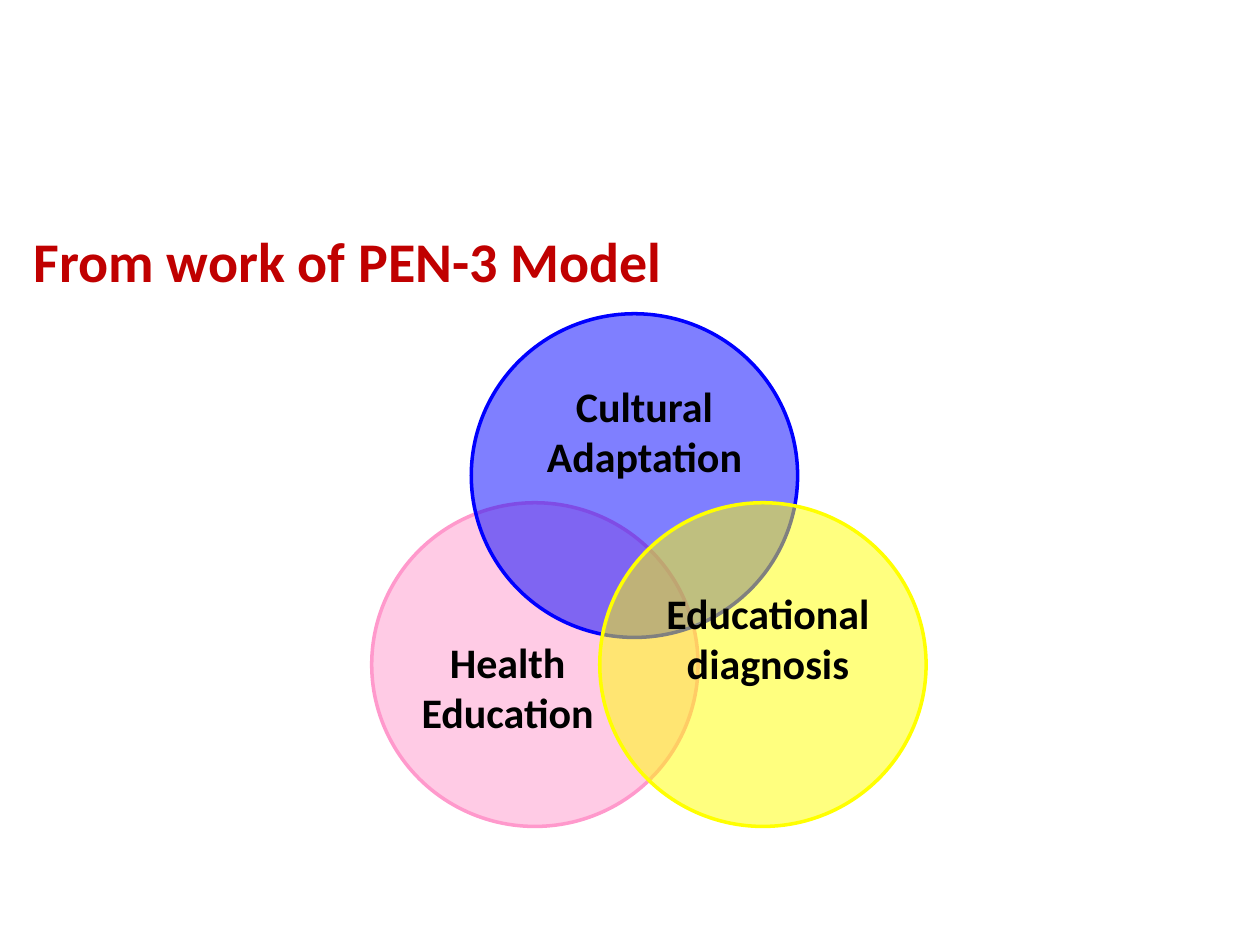
from lxml.etree import SubElement
from pptx import Presentation
from pptx.dml.color import RGBColor
from pptx.enum.shapes import MSO_SHAPE
from pptx.enum.text import PP_ALIGN
from pptx.oxml.ns import qn
from pptx.util import Pt

RED = RGBColor(0xC0, 0x00, 0x00)
BLACK = RGBColor(0x00, 0x00, 0x00)
PINK = RGBColor(0xFF, 0x99, 0xCC)
BLUE = RGBColor(0x00, 0x00, 0xFF)
YELLOW = RGBColor(0xFF, 0xFF, 0x00)


class VennSlide:
    font_name = "Calibri"
    circle_width = 186.5
    circle_height = 185
    label_height = 65.5

    def __init__(self, presentation):
        self.slide = presentation.slides.add_slide(presentation.slide_layouts[6])

    def text(self, wording, left, top, width, height, size, color, alignment):
        box = self.slide.shapes.add_textbox(Pt(left), Pt(top), Pt(width), Pt(height))
        box.text_frame.word_wrap = True
        box.text_frame.text = wording
        paragraph = box.text_frame.paragraphs[0]
        paragraph.alignment = alignment
        font = paragraph.runs[0].font
        font.name = self.font_name
        font.size = Pt(size)
        font.bold = True
        font.color.rgb = color

    def title(self, wording):
        self.text(wording, 12.2, 126, 443.5, 46, 32, RED, PP_ALIGN.LEFT)

    def label(self, wording, left, top, width):
        self.text(wording, left, top, width, self.label_height, 24, BLACK, PP_ALIGN.CENTER)

    def circle(self, left, top, color):
        shape = self.slide.shapes.add_shape(
            MSO_SHAPE.OVAL, Pt(left), Pt(top), Pt(self.circle_width), Pt(self.circle_height)
        )
        shape.shadow.inherit = False
        shape.fill.solid()
        shape.fill.fore_color.rgb = color
        fill_color = shape.element.spPr.find(qn("a:solidFill")).find(qn("a:srgbClr"))
        SubElement(fill_color, qn("a:alpha"), val="50000")
        shape.line.color.rgb = color
        shape.line.width = Pt(2)


def main():
    presentation = Presentation()
    presentation.slide_width = Pt(720)
    presentation.slide_height = Pt(540)
    venn = VennSlide(presentation)

    venn.title("From work of PEN-3 Model")
    for left, top, color in (
        (212.4, 287.3, PINK),
        (269.3, 179.3, BLUE),
        (342.7, 287.3, YELLOW),
    ):
        venn.circle(left, top, color)
    for wording, left, top, width in (
        ("Health Education", 202.3, 360, 175.7),
        ("Cultural Adaptation", 286.6, 213.8, 163.4),
        ("Educational diagnosis", 360, 331.9, 157.7),
    ):
        venn.label(wording, left, top, width)

    presentation.save("out.pptx")


if __name__ == "__main__":
    main()
